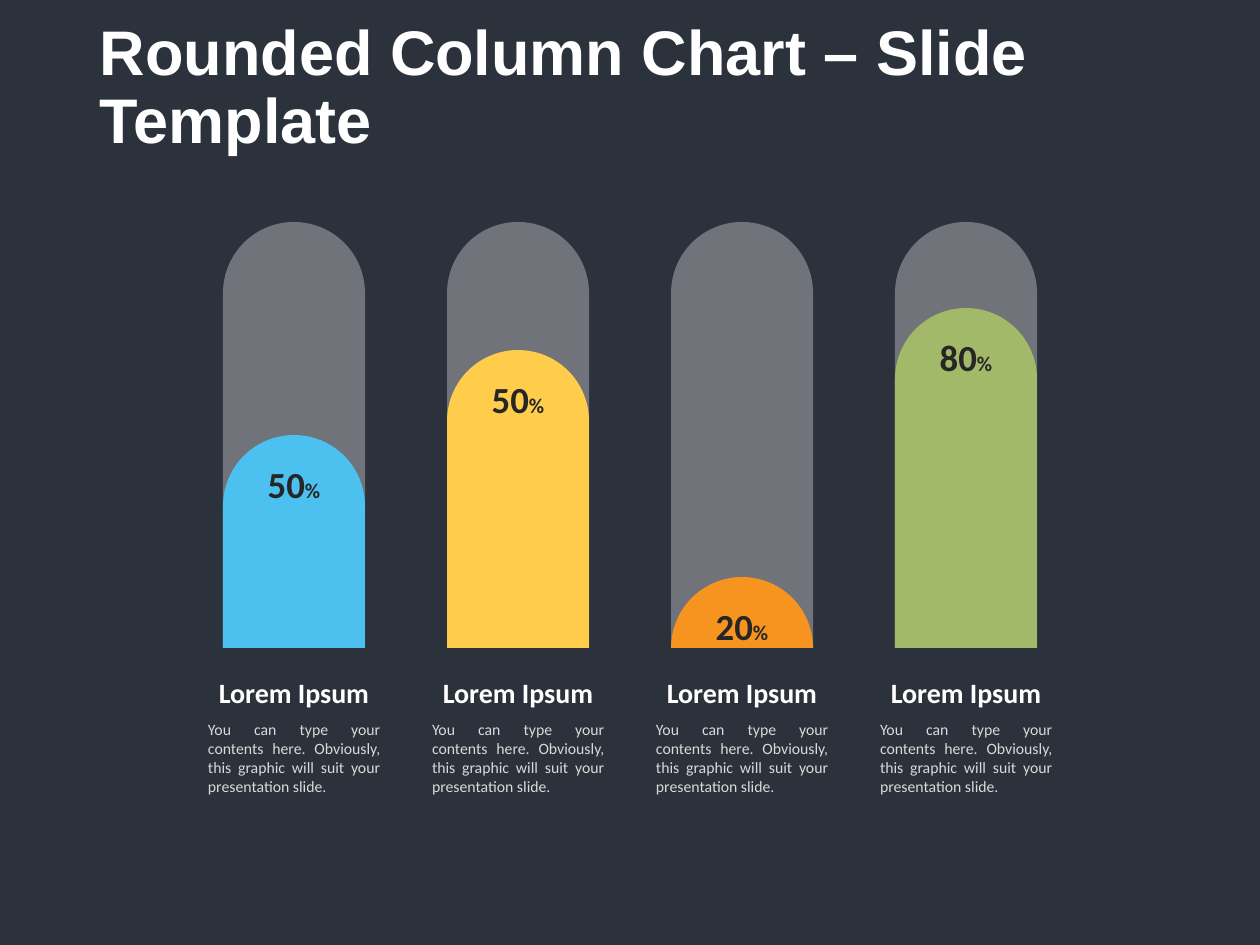
from dataclasses import dataclass

from lxml import etree
from pptx import Presentation
from pptx.dml.color import RGBColor
from pptx.enum.shapes import MSO_SHAPE
from pptx.enum.text import MSO_ANCHOR, PP_ALIGN
from pptx.oxml.ns import qn
from pptx.util import Emu, Pt

RECT, OVAL = MSO_SHAPE.RECTANGLE, MSO_SHAPE.OVAL
ROUNDED_TOP = MSO_SHAPE.ROUND_2_SAME_RECTANGLE
TOP, BOTTOM = MSO_ANCHOR.TOP, MSO_ANCHOR.BOTTOM
LEFT, CENTER, JUSTIFY = PP_ALIGN.LEFT, PP_ALIGN.CENTER, PP_ALIGN.JUSTIFY

PX_PER_INCH = 126
SLIDE_W, SLIDE_H = 1260, 945

# Column geometry in px
FIRST_X, PITCH = 223, 224
COLUMN_W, TRACK_TOP, BASELINE = 142, 222, 648
CAPTION_W = 172


@dataclass(frozen=True)
class Theme:
    background: str = "2B323B"
    track: str = "D9D9D9"
    track_alpha: int = 40
    heading: str = "FFFFFF"
    body: str = "D9D9D9"
    value: str = "262626"
    title_font: str = "Arial"
    text_font: str = "Calibri"
    title_size: int = 36
    value_size: int = 21
    percent_size: int = 12
    caption_size: int = 16
    body_size: int = 9


@dataclass(frozen=True)
class Column:
    value: str
    dome_top: int
    color: str
    caption: str = "Lorem Ipsum"
    body: str = ("You can type your contents here. Obviously, "
                 "this graphic will suit your presentation slide.")


THEME = Theme()
COLUMNS = (
    Column("50", 435, "4CC1EF"),
    Column("50", 350, "FFCC4C"),
    Column("20", 577, "F7931F"),
    Column("80", 308, "A2B969"),
)


def px(length: int) -> Emu:
    return Emu(round(length * 914400 / PX_PER_INCH))


def add_block(slide, kind, x: int, y: int, w: int, h: int, color: str):
    """Draw a flat preset shape without an outline."""
    block = slide.shapes.add_shape(kind, px(x), px(y), px(w), px(h))
    block.shadow.inherit = False
    block.fill.solid()
    block.fill.fore_color.rgb = RGBColor.from_string(color)
    block.line.fill.background()
    return block


def write(frame, *runs: tuple[str, int], color: str, font: str = THEME.text_font,
          bold: bool = False, align=LEFT, anchor=TOP, left: int = 0,
          right: int = 0, spacing: float = 1.0) -> None:
    """Fill a text frame with one paragraph of (text, size) runs."""
    frame.word_wrap = True
    frame.vertical_anchor = anchor
    frame.margin_left, frame.margin_right = px(left), px(right)
    frame.margin_top = frame.margin_bottom = Pt(3.6)
    paragraph = frame.paragraphs[0]
    paragraph.alignment = align
    paragraph.line_spacing = spacing
    for text, size in runs:
        run = paragraph.add_run()
        run.text = text
        run.font.name, run.font.size, run.font.bold = font, Pt(size), bold
        run.font.color.rgb = RGBColor.from_string(color)


def add_label(slide, x: int, y: int, w: int, h: int, text: str, size: int,
              **text_format) -> None:
    box = slide.shapes.add_textbox(px(x), px(y), px(w), px(h))
    write(box.text_frame, (text, size), **text_format)


def add_column(slide, x: int, column: Column) -> None:
    # Translucent full-height track
    track = add_block(slide, ROUNDED_TOP, x, TRACK_TOP, COLUMN_W,
                      BASELINE - TRACK_TOP, THEME.track)
    track.adjustments[0] = 0.5
    track_color = track.element.spPr.find(qn("a:solidFill"))[0]
    etree.SubElement(track_color, qn("a:alpha"), val=str(THEME.track_alpha * 1000))

    # Filled part: straight body below a round dome
    body_top = column.dome_top + COLUMN_W // 2
    if body_top < BASELINE:
        add_block(slide, RECT, x, body_top, COLUMN_W, BASELINE - body_top, column.color)
    dome = add_block(slide, OVAL, x, column.dome_top, COLUMN_W, COLUMN_W, column.color)
    write(dome.text_frame, (column.value, THEME.value_size), ("%", THEME.percent_size),
          color=THEME.value, bold=True, align=CENTER, left=13, right=13)


def add_caption(slide, x: int, column: Column) -> None:
    caption_x = x + (COLUMN_W - CAPTION_W) // 2
    add_label(slide, caption_x, 668, CAPTION_W, 47, column.caption, THEME.caption_size,
              color=THEME.heading, bold=True, align=CENTER, anchor=BOTTOM)
    add_label(slide, caption_x, 714, CAPTION_W, 89, column.body, THEME.body_size,
              color=THEME.body, align=JUSTIFY)


def main() -> None:
    deck = Presentation()
    deck.slide_width, deck.slide_height = px(SLIDE_W), px(SLIDE_H)
    slide = deck.slides.add_slide(deck.slide_layouts[6])
    slide.background.fill.solid()
    slide.background.fill.fore_color.rgb = RGBColor.from_string(THEME.background)

    # Title
    add_label(slide, 87, 15, 1173, 102, "Rounded Column Chart – Slide Template",
              THEME.title_size, color=THEME.heading, font=THEME.title_font,
              bold=True, left=13, spacing=0.9)

    # Columns, then the strip that hides whatever falls below the baseline
    placed = [(FIRST_X + i * PITCH, column) for i, column in enumerate(COLUMNS)]
    for x, column in placed:
        add_column(slide, x, column)
    strip_w = (len(COLUMNS) - 1) * PITCH + COLUMN_W
    add_block(slide, RECT, FIRST_X, BASELINE, strip_w, 83, THEME.background)

    # Captions
    for x, column in placed:
        add_caption(slide, x, column)

    deck.save("out.pptx")


if __name__ == "__main__":
    main()
